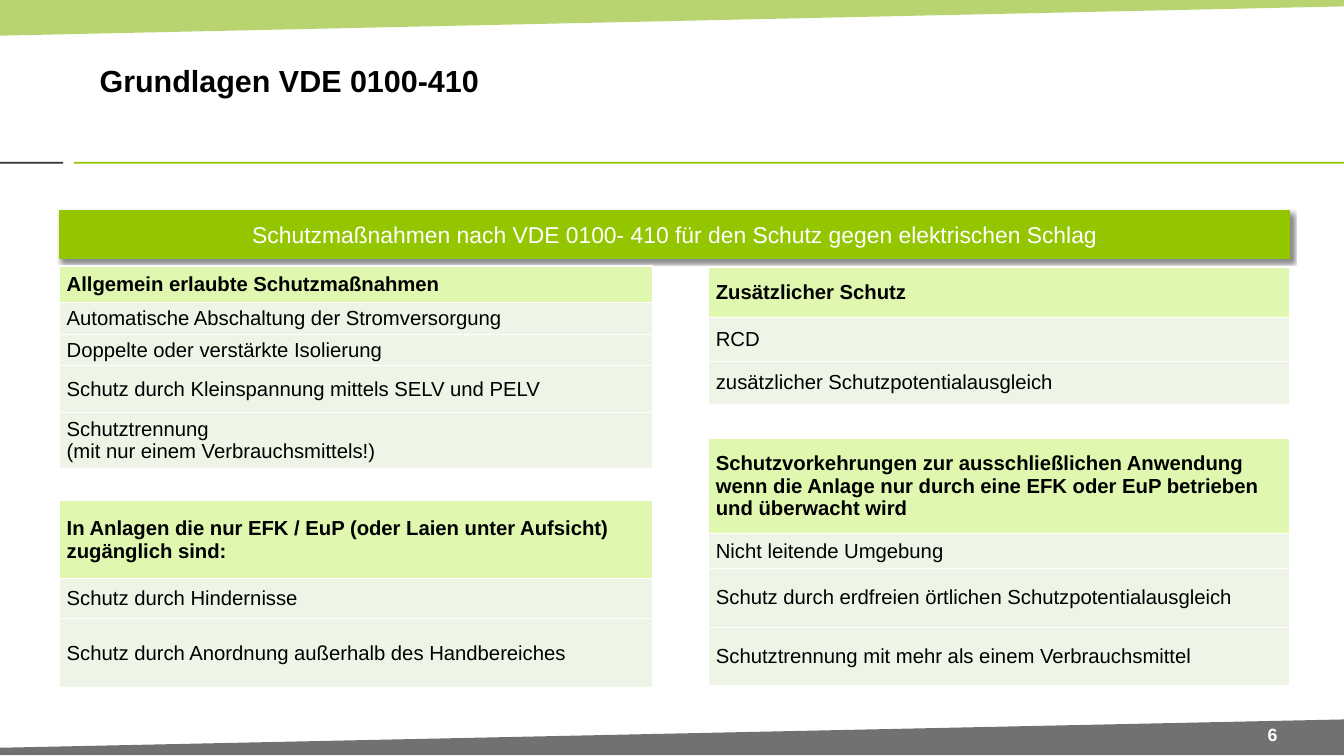
from lxml import etree
from pptx import Presentation
from pptx.dml.color import RGBColor
from pptx.enum import shapes, text
from pptx.oxml import parse_xml
from pptx.oxml.ns import nsdecls, qn
from pptx.util import Inches, Pt

WIDTH, HEIGHT = 14.7, 8.27
BLACK = RGBColor(0x00, 0x00, 0x00)
WHITE = RGBColor(0xFF, 0xFF, 0xFF)
GREEN = RGBColor(0x94, 0xC6, 0x00)
TOP_GREEN = RGBColor(0x95, 0xC0, 0x2A)
HEADING_GREEN = RGBColor(0xDF, 0xF7, 0xAE)
ROW_GREEN = RGBColor(0xEE, 0xF5, 0xE7)
FOOTER_GRAY = RGBColor(0x70, 0x71, 0x73)
RULE_GRAY = RGBColor(0x31, 0x31, 0x30)

LEFT_COLUMN = (0.65, 6.49)
RIGHT_COLUMN = (7.75, 6.35)

# Column, top, row heights, heading followed by measures
MEASURE_TABLES = [
    (LEFT_COLUMN, 2.91, [0.4, 0.3, 0.3, 0.51, 0.52], [
        "Allgemein erlaubte Schutzmaßnahmen",
        "Automatische Abschaltung der Stromversorgung",
        "Doppelte oder verstärkte Isolierung",
        "Schutz durch Kleinspannung mittels SELV und PELV",
        "Schutztrennung\n(mit nur einem Verbrauchsmittels!)"]),
    (RIGHT_COLUMN, 4.8, [1.04, 0.38, 0.64, 0.64], [
        "Schutzvorkehrungen zur ausschließlichen Anwendung wenn die Anlage "
        "nur durch eine EFK oder EuP betrieben und überwacht wird",
        "Nicht leitende Umgebung",
        "Schutz durch erdfreien örtlichen Schutzpotentialausgleich",
        "Schutztrennung mit mehr als einem Verbrauchsmittel"]),
    (LEFT_COLUMN, 5.48, [0.85, 0.44, 0.75], [
        "In Anlagen die nur EFK / EuP (oder Laien unter Aufsicht) "
        "zugänglich sind:",
        "Schutz durch Hindernisse",
        "Schutz durch Anordnung außerhalb des Handbereiches"]),
    (RIGHT_COLUMN, 2.93, [0.54, 0.48, 0.48], [
        "Zusätzlicher Schutz",
        "RCD",
        "zusätzlicher Schutzpotentialausgleich"]),
]


def write(frame, wording, size=16, color=BLACK, bold=False,
          align=text.PP_ALIGN.LEFT):
    frame.word_wrap = True
    paragraph = frame.paragraphs[0]
    paragraph.text = wording.replace("\n", "\v")
    paragraph.alignment = align
    for run in paragraph.runs:
        run.font.name = "Arial"
        run.font.size = Pt(size)
        run.font.bold = bold
        run.font.color.rgb = color


def add_label(slide, box, wording, **style):
    frame = slide.shapes.add_textbox(*map(Inches, box)).text_frame
    frame.margin_left = frame.margin_right = Inches(0.11)
    frame.margin_top = frame.margin_bottom = Inches(0.06)
    frame.vertical_anchor = text.MSO_ANCHOR.MIDDLE
    write(frame, wording, **style)


def paint(shape, color):
    shape.shadow.inherit = False
    shape.fill.solid()
    shape.fill.fore_color.rgb = color
    shape.line.fill.background()


def add_bar(slide, box, color):
    bar = slide.shapes.add_shape(shapes.MSO_SHAPE.RECTANGLE,
                                 *map(Inches, box))
    paint(bar, color)
    return bar


def add_wedge(slide, corners, color):
    points = [(Inches(x), Inches(y)) for x, y in corners]
    builder = slide.shapes.build_freeform(*points[0])
    builder.add_line_segments(points[1:], close=True)
    wedge = builder.convert_to_shape()
    paint(wedge, color)
    return wedge


def set_opacity(shape, percent):
    fill_color = shape.fill._xPr.find(qn("a:solidFill"))[0]
    etree.SubElement(fill_color, qn("a:alpha"), val=str(percent * 1000))


def cast_shadow(shape):
    effects = shape.element.spPr.find(qn("a:effectLst"))
    effects.append(parse_xml(
        f'<a:outerShdw {nsdecls("a")} blurRad="{Pt(3)}" dist="{Pt(3)}" '
        'dir="2700000" rotWithShape="0"><a:srgbClr val="000000">'
        '<a:alpha val="45000"/></a:srgbClr></a:outerShdw>'))


def add_borders(cell):
    """Draw thin white lines; call before the cell is filled."""
    properties = cell._tc.get_or_add_tcPr()
    for side in "LRTB":
        properties.append(parse_xml(
            f'<a:ln{side} {nsdecls("a")} w="{Pt(1)}"><a:solidFill>'
            f'<a:srgbClr val="{WHITE}"/></a:solidFill></a:ln{side}>'))


def add_measure_table(slide, column, top, heights, measures):
    left, width = column
    table = slide.shapes.add_table(
        len(measures), 1, Inches(left), Inches(top),
        Inches(width), Inches(sum(heights))).table
    table.horz_banding = False
    for index, (height, measure) in enumerate(zip(heights, measures)):
        heading = index == 0
        table.rows[index].height = Inches(height)
        cell = table.cell(index, 0)
        cell.margin_left = cell.margin_right = Inches(0.08)
        cell.margin_top = cell.margin_bottom = Inches(0.04)
        cell.vertical_anchor = text.MSO_ANCHOR.MIDDLE
        add_borders(cell)
        cell.fill.solid()
        cell.fill.fore_color.rgb = HEADING_GREEN if heading else ROW_GREEN
        write(cell.text_frame, measure, bold=heading)


def add_frame(slide):
    """Add the slanted edges, the rule under the title and the page number."""
    top_edge = add_wedge(
        slide, [(0, 0), (WIDTH, 0), (WIDTH, 0.07), (0, 0.39)], TOP_GREEN)
    set_opacity(top_edge, 67)
    add_bar(slide, (0, 1.77, 0.69, 0.02), RULE_GRAY)
    add_bar(slide, (0.81, 1.77, WIDTH - 0.81, 0.02), GREEN)
    add_wedge(slide, [(WIDTH, 8.26), (0, 8.26), (0, 8.18), (WIDTH, 7.87)],
              FOOTER_GRAY)
    add_label(slide, (13.49, 7.89, 0.86, 0.29), "6", size=14, color=WHITE,
              bold=True, align=text.PP_ALIGN.CENTER)


def add_banner(slide):
    banner = add_bar(slide, (0.65, 2.3, 13.46, 0.53), GREEN)
    banner.line.color.rgb = GREEN
    banner.line.width = Pt(0.79)
    cast_shadow(banner)
    banner.text_frame.vertical_anchor = text.MSO_ANCHOR.MIDDLE
    write(banner.text_frame,
          "Schutzmaßnahmen nach VDE 0100- 410 für den Schutz gegen "
          "elektrischen Schlag",
          size=18, color=WHITE, align=text.PP_ALIGN.CENTER)


def main():
    deck = Presentation()
    deck.slide_width, deck.slide_height = Inches(WIDTH), Inches(HEIGHT)
    slide = deck.slides.add_slide(deck.slide_layouts[6])
    add_frame(slide)
    add_label(slide, (0.98, 0.28, 11.54, 1.19), "Grundlagen VDE 0100-410",
              size=24, bold=True)
    add_banner(slide)
    for measure_table in MEASURE_TABLES:
        add_measure_table(slide, *measure_table)
    deck.save("out.pptx")


if __name__ == "__main__":
    main()
